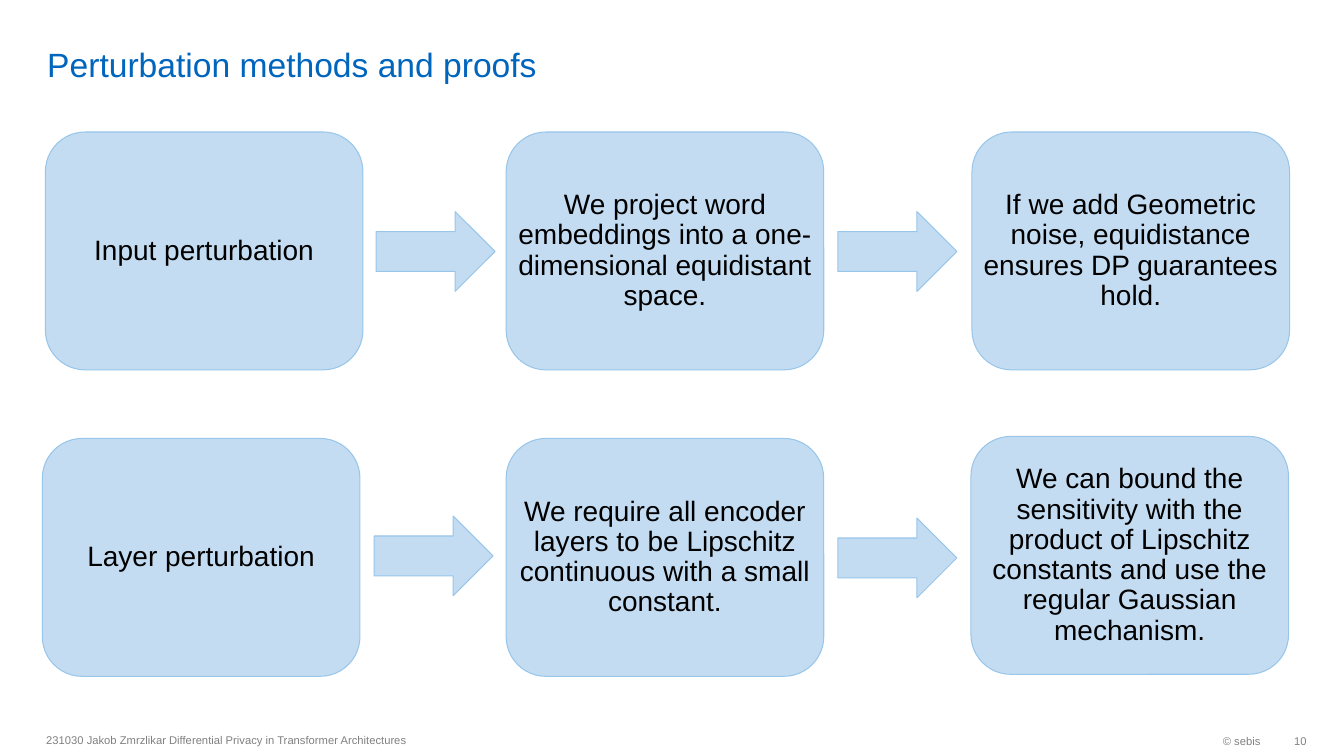
from pptx import Presentation
from pptx.dml.color import RGBColor as RGB
from pptx.enum.shapes import MSO_SHAPE as Kind
from pptx.enum.text import MSO_ANCHOR as Anchor, PP_ALIGN as Align
from pptx.util import Inches, Pt


def tint(code):
    return RGB.from_string(code)


class Deck:
    font = "Arial"
    blue, gray, ink = "0065BD", "808080", "000000"
    fill, edge = "C4DCF2", "98C6EA"

    def __init__(self):
        self.file = Presentation()
        self.file.slide_width = Inches(13.33)
        self.file.slide_height = Inches(7.5)
        self.slide = self.file.slides.add_slide(self.file.slide_layouts[6])

    def style(self, shape, text, size, color, align, anchor, pads):
        frame = shape.text_frame
        frame.word_wrap = True
        frame.vertical_anchor = anchor
        (frame.margin_left, frame.margin_top,
         frame.margin_right, frame.margin_bottom) = map(Inches, pads)
        frame.text = text
        para = frame.paragraphs[0]
        para.alignment = align
        font = para.runs[0].font
        font.name = self.font
        font.size = Pt(size)
        font.color.rgb = tint(color)
        return para

    def label(self, text, at, size, color, align=Align.LEFT,
              anchor=Anchor.MIDDLE, pads=(0.1, 0.05, 0.1, 0.05)):
        box = self.slide.shapes.add_textbox(*map(Inches, at))
        self.style(box, text, size, color, align, anchor, pads)

    def shape(self, kind, *at):
        item = self.slide.shapes.add_shape(kind, *map(Inches, at))
        item.shadow.inherit = False
        item.fill.solid()
        item.fill.fore_color.rgb = tint(self.fill)
        item.line.color.rgb = tint(self.edge)
        item.line.width = Pt(0.75)
        return item

    def card(self, text, left, top):
        item = self.shape(Kind.ROUNDED_RECTANGLE, left, top, 3.15, 2.36)
        para = self.style(item, text, 20, self.ink, Align.CENTER,
                          Anchor.MIDDLE, (0, 0, 0, 0))
        para.line_spacing = 0.9

    def arrow(self, left, top):
        self.shape(Kind.RIGHT_ARROW, left, top, 1.18, 0.79)


def main():
    deck = Deck()
    deck.label("Perturbation methods and proofs", (0.37, 0.05, 11.58, 0.79),
               24, deck.blue, anchor=Anchor.BOTTOM, pads=(0.1, 0, 0.1, 0))

    cards = [
        ("Input perturbation", 0.45, 1.31),
        ("We project word embeddings into a one-dimensional equidistant space.",
         5.02, 1.31),
        ("If we add Geometric noise, equidistance ensures DP guarantees hold.",
         9.64, 1.31),
        ("Layer perturbation", 0.42, 4.35),
        ("We require all encoder layers to be Lipschitz continuous "
         "with a small constant.", 5.02, 4.35),
        ("We can bound the sensitivity with the product of Lipschitz "
         "constants and use the regular Gaussian mechanism.", 9.63, 4.33),
    ]
    for text, left, top in cards:
        deck.card(text, left, top)
    for left, top in [(3.73, 2.1), (8.31, 2.1), (3.71, 5.12), (8.31, 5.14)]:
        deck.arrow(left, top)

    deck.label("231030 Jakob Zmrzlikar Differential Privacy in "
               "Transformer Architectures", (0.36, 7.18, 6.3, 0.32),
               8, deck.gray)
    deck.label("© sebis", (10.26, 7.19, 2.34, 0.32), 8, deck.gray, Align.RIGHT)
    deck.label("10", (12.6, 7.19, 0.36, 0.32), 8, deck.gray, Align.RIGHT,
               pads=(0.1, 0.05, 0, 0.05))
    deck.file.save("out.pptx")


if __name__ == "__main__":
    main()
